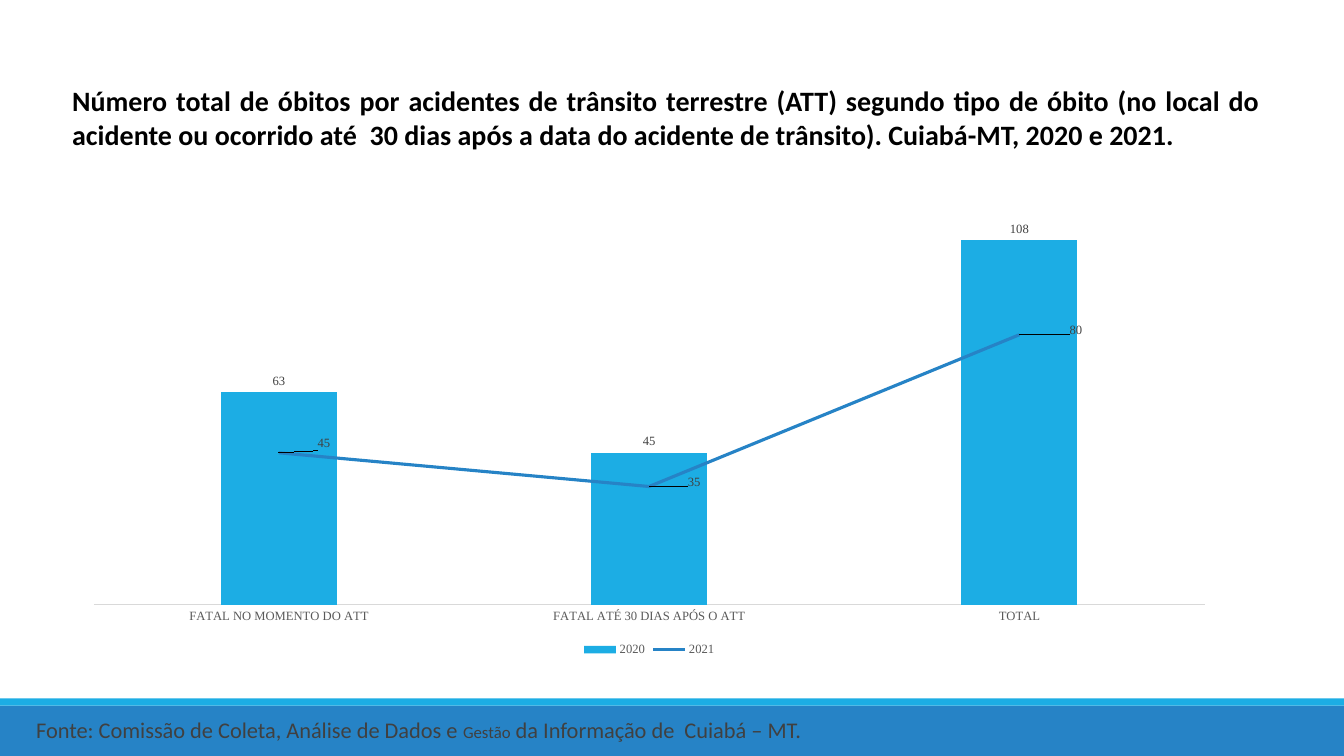
from dataclasses import dataclass

import pptx
import pptx.chart.data
import pptx.dml.color
import pptx.enum.chart
import pptx.enum.shapes
import pptx.enum.text
import pptx.oxml
import pptx.oxml.ns
import pptx.util

Cm = pptx.util.Cm
Pt = pptx.util.Pt
RGB = pptx.dml.color.RGBColor
qn = pptx.oxml.ns.qn

BLACK = RGB(0x00, 0x00, 0x00)
DARK = RGB(0x40, 0x40, 0x40)
GRAY = RGB(0x59, 0x59, 0x59)
PALE = RGB(0xD9, 0xD9, 0xD9)
CYAN = RGB(0x1C, 0xAD, 0xE4)
BLUE = RGB(0x26, 0x83, 0xC6)
SANS = "Calibri"
SERIF = "Times New Roman"


@dataclass
class Box:
    left: float
    top: float
    width: float
    height: float

    def place(self) -> tuple:
        return tuple(Cm(n) for n in (self.left, self.top, self.width, self.height))


@dataclass
class Band:
    box: Box
    color: RGB


@dataclass
class Run:
    text: str
    size: int


@dataclass
class Note:
    box: Box
    runs: list[Run]
    color: RGB
    bold: bool
    align: pptx.enum.text.PP_ALIGN


@dataclass
class Shift:
    """Label offset from its point, as a share of the chart."""
    x: float
    y: float


BANDS = [
    Band(Box(0, 17.78, 33.87, 1.27), BLUE),
    Band(Box(0, 17.6, 33.87, 0.18), CYAN),
]
NOTES = [
    Note(Box(1.57, 1.98, 30.43, 1.96),
         [Run("Número total de óbitos por acidentes de trânsito terrestre (ATT) "
              "segundo tipo de óbito (no local do acidente ou ocorrido até  30 dias "
              "após a data do acidente de trânsito). Cuiabá-MT, 2020 e 2021.", 20)],
         BLACK, True, pptx.enum.text.PP_ALIGN.JUSTIFY),
    Note(Box(0.66, 17.93, 33.2, 0.94),
         [Run("Fonte: Comissão de Coleta, Análise de Dados e ", 16),
          Run("Gestão", 12),
          Run(" da Informação de  Cuiabá – MT.", 16)],
         DARK, False, pptx.enum.text.PP_ALIGN.LEFT),
]
CHART = Box(1.78, 4.8, 29.16, 11.86)
TYPES = ["FATAL NO MOMENTO DO ATT", "FATAL ATÉ 30 DIAS APÓS O ATT", "TOTAL"]
DEATHS = {"2020": (63, 45, 108), "2021": (45, 35, 80)}
SHIFTS = [Shift(0.03, -0.02), Shift(0.03, -0.01), Shift(0.04, -0.01)]


def draw_band(slide, band: Band) -> None:
    kind = pptx.enum.shapes.MSO_SHAPE.RECTANGLE
    shape = slide.shapes.add_shape(kind, *band.box.place())
    shape.shadow.inherit = False
    shape.fill.solid()
    shape.fill.fore_color.rgb = band.color
    shape.line.fill.background()


def draw_note(slide, note: Note) -> None:
    frame = slide.shapes.add_textbox(*note.box.place()).text_frame
    frame.word_wrap = True
    para = frame.paragraphs[0]
    para.alignment = note.align
    style(para.font, SANS, note.runs[0].size, note.color)
    para.font.bold = note.bold
    for item in note.runs:
        run = para.add_run()
        run.text = item.text
        run.font.size = Pt(item.size)


def style(font, name: str, size: int, color: RGB) -> None:
    font.name = name
    font.size = Pt(size)
    font.color.rgb = color


def layout(parts: dict):
    """Manual layout element for a plot area or a label."""
    items = "".join(f'<c:{key} val="{val}"/>' for key, val in parts.items())
    return pptx.oxml.parse_xml(
        f'<c:layout {pptx.oxml.ns.nsdecls("c")}><c:manualLayout>{items}'
        "</c:manualLayout></c:layout>")


def add_line(chart) -> None:
    """Move the second bar series to a line plot on the same axes."""
    bars = chart.plots[0]
    ser = bars.series[1].format and chart._chartSpace.findall(".//" + qn("c:ser"))[1]
    root = ser.getparent()
    for flag in ser.findall(qn("c:invertIfNegative")):
        ser.remove(flag)
    axes = "".join(f'<c:axId val="{ax.get("val")}"/>' for ax in root.findall(qn("c:axId")))
    line = pptx.oxml.parse_xml(
        f'<c:lineChart {pptx.oxml.ns.nsdecls("c")}><c:grouping val="standard"/>'
        f'<c:varyColors val="0"/><c:marker val="1"/>{axes}</c:lineChart>')
    line.insert(2, ser)
    root.addnext(line)


def draw_chart(slide) -> None:
    enum = pptx.enum.chart
    data = pptx.chart.data.CategoryChartData()
    data.categories = TYPES
    for year, counts in DEATHS.items():
        data.add_series(year, counts)
    chart = slide.shapes.add_chart(
        enum.XL_CHART_TYPE.COLUMN_CLUSTERED, *CHART.place(), data).chart
    style(chart.font, SANS, 10, BLACK)
    chart.has_title = False
    add_line(chart)

    # Plot area
    area = chart._chartSpace.find(".//" + qn("c:plotArea"))
    for old in area.findall(qn("c:layout")):
        area.remove(old)
    area.insert(0, layout({"layoutTarget": "inner", "xMode": "edge", "yMode": "edge",
                           "x": 0.02, "y": 0.02, "w": 0.96, "h": 0.86}))

    # Axes and legend
    axis = chart.category_axis
    axis.major_tick_mark = enum.XL_TICK_MARK.NONE
    axis.format.line.color.rgb = PALE
    axis.format.line.width = Pt(0.75)
    style(axis.tick_labels.font, SERIF, 9, GRAY)
    scale = chart.value_axis
    scale.minimum_scale, scale.maximum_scale = 0, 120
    scale.has_major_gridlines = False
    scale.visible = False
    chart.has_legend = True
    chart.legend.position = enum.XL_LEGEND_POSITION.BOTTOM
    chart.legend.include_in_layout = False
    style(chart.legend.font, SERIF, 9, GRAY)

    # Bars for 2020
    bars, lines = chart.plots
    bars.gap_width, bars.overlap = 219, -27
    bars.vary_by_categories = False
    first, last = bars.series[0], lines.series[0]
    first.format.fill.solid()
    first.format.fill.fore_color.rgb = CYAN

    # Line for 2021
    last.format.line.color.rgb = BLUE
    last.format.line.width = Pt(2.25)
    last.marker.style = enum.XL_MARKER_STYLE.NONE
    last.smooth = False

    # Value labels
    spots = enum.XL_LABEL_POSITION
    for series, spot in ((first, spots.OUTSIDE_END), (last, spots.RIGHT)):
        labels = series.data_labels
        labels.show_value = True
        labels.position = spot
        style(labels.font, SERIF, 9, DARK)
    for num, shift in enumerate(SHIFTS):
        label = last.points[num].data_label
        style(label.font, SERIF, 9, DARK)
        label.position = spots.RIGHT
    marks = chart._chartSpace.findall(".//" + qn("c:dLbl"))
    for mark, shift in zip(marks, SHIFTS):
        mark.find(qn("c:idx")).addnext(layout({"x": shift.x, "y": shift.y}))


def main() -> None:
    deck = pptx.Presentation()
    deck.slide_width, deck.slide_height = Cm(33.87), Cm(19.05)
    slide = deck.slides.add_slide(deck.slide_layouts[6])
    for band in BANDS:
        draw_band(slide, band)
    for note in NOTES:
        draw_note(slide, note)
    draw_chart(slide)
    deck.save("out.pptx")


if __name__ == "__main__":
    main()
